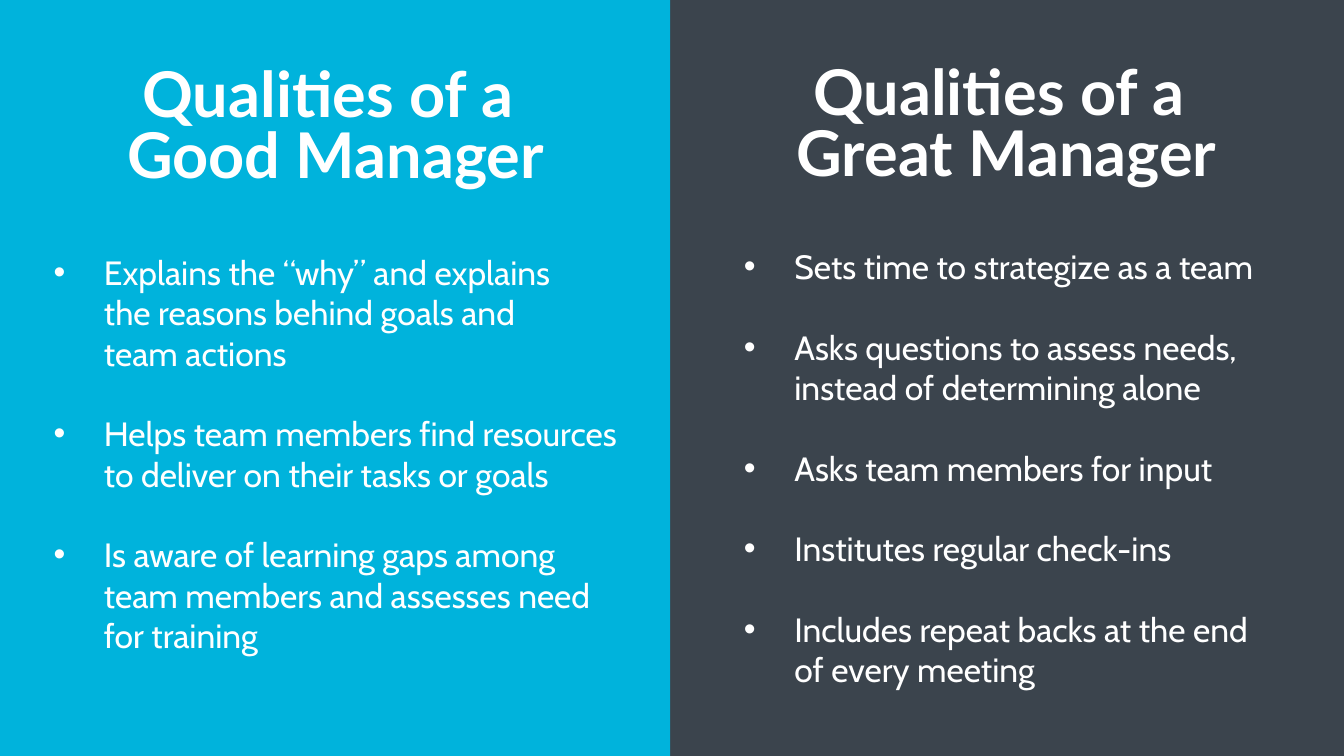
from dataclasses import dataclass

from lxml import etree
from pptx import Presentation
from pptx.dml.color import RGBColor
from pptx.enum.shapes import MSO_SHAPE
from pptx.enum.text import MSO_ANCHOR, MSO_AUTO_SIZE, PP_ALIGN
from pptx.oxml.ns import qn
from pptx.util import Cm, Pt

RECTANGLE = MSO_SHAPE.RECTANGLE
TOP = MSO_ANCHOR.TOP
GROW = MSO_AUTO_SIZE.SHAPE_TO_FIT_TEXT
CENTER = PP_ALIGN.CENTER
TITLE_ONLY = 5


@dataclass(frozen=True)
class Theme:
    """Colours, fonts and type sizes of the slide."""
    good: RGBColor = RGBColor(0x00, 0xB3, 0xDC)
    great: RGBColor = RGBColor(0x3B, 0x44, 0x4D)
    text: RGBColor = RGBColor(0xFF, 0xFF, 0xFF)
    heading_font: str = "Lato"
    body_font: str = "Cabin"
    heading_size: Pt = Pt(45)
    body_size: Pt = Pt(24)
    item_gap: Pt = Pt(28.8)
    hanging: Cm = Cm(1.27)


THEME = Theme()

GOOD_QUALITIES = [
    "Explains the “why” and explains\vthe reasons behind goals and\vteam actions",
    "Helps team members find resources to deliver on their tasks or goals",
    "Is aware of learning gaps among team members and assesses need for training",
]
GREAT_QUALITIES = [
    "Sets time to strategize as a team",
    "Asks questions to assess needs, instead of determining alone",
    "Asks team members for input",
    "Institutes regular check-ins",
    "Includes repeat backs at the end of every meeting",
]


def place(box, left, top, width, height):
    """Move and size a box, in centimetres."""
    box.left, box.top, box.width, box.height = map(Cm, (left, top, width, height))


def add_panel(page, left, width, color):
    """Add a full-height colour panel behind the title."""
    panel = page.shapes.add_shape(RECTANGLE, Cm(left), Cm(-0.13), Cm(width), Cm(19.18))
    panel.shadow.inherit = False
    panel.fill.solid()
    panel.fill.fore_color.rgb = color
    panel.line.fill.background()
    page.shapes.title.element.addprevious(panel.element)


def add_box(page):
    """Add an empty text box, to be placed later."""
    return page.shapes.add_textbox(0, 0, 0, 0)


def fill_text(box, lines, side, edge, font, size, bold):
    """Write the lines into a box, one paragraph each, and style them."""
    frame = box.text_frame
    frame.text = "\n".join(lines)
    frame.word_wrap = True
    frame.auto_size = GROW
    frame.vertical_anchor = TOP
    frame.margin_left = frame.margin_right = Cm(side)
    frame.margin_top = frame.margin_bottom = Cm(edge)
    for para in frame.paragraphs:
        for span in para.runs:
            span.font.name = font
            span.font.size = size
            span.font.bold = bold
            span.font.color.rgb = THEME.text
    return frame.paragraphs


def write_heading(box, lines):
    """Write a bold centred heading."""
    for para in fill_text(box, lines, 0.18, 0.1, THEME.heading_font, THEME.heading_size, True):
        para.alignment = CENTER
        para.line_spacing = 0.8


def write_list(box, items):
    """Write a spaced bullet list with hanging indents."""
    paras = fill_text(box, items, 0.13, 0.05, THEME.body_font, THEME.body_size, False)
    for para in paras:
        if para is not paras[-1]:
            para.space_after = THEME.item_gap
        properties = para._p.get_or_add_pPr()
        properties.set("marL", str(THEME.hanging))
        properties.set("indent", str(-THEME.hanging))
        etree.SubElement(properties, qn("a:buFont"), typeface="Arial")
        etree.SubElement(properties, qn("a:buChar"), char="•")


def main():
    """Build the two-column comparison slide."""
    deck = Presentation()
    deck.slide_width, deck.slide_height = Cm(33.87), Cm(19.05)
    page = deck.slides.add_slide(deck.slide_layouts[TITLE_ONLY])

    add_panel(page, 16.89, 16.99, THEME.great)
    add_panel(page, 0, 16.89, THEME.good)

    good_heading = page.shapes.title
    place(good_heading, 1.04, 1.65, 14.83, 3.3)
    write_heading(good_heading, ["Qualities of a ", "Good Manager"])

    good_list = add_box(page)
    place(good_list, 1.22, 6.3, 14.68, 10.39)
    write_list(good_list, GOOD_QUALITIES)

    great_heading = add_box(page)
    place(great_heading, 17.68, 1.6, 15.37, 3.3)
    write_heading(great_heading, ["Qualities of a ", "Great Manager"])

    great_list = add_box(page)
    place(great_list, 18.62, 6.15, 13.74, 11.4)
    write_list(great_list, GREAT_QUALITIES)

    deck.save("out.pptx")


if __name__ == "__main__":
    main()
